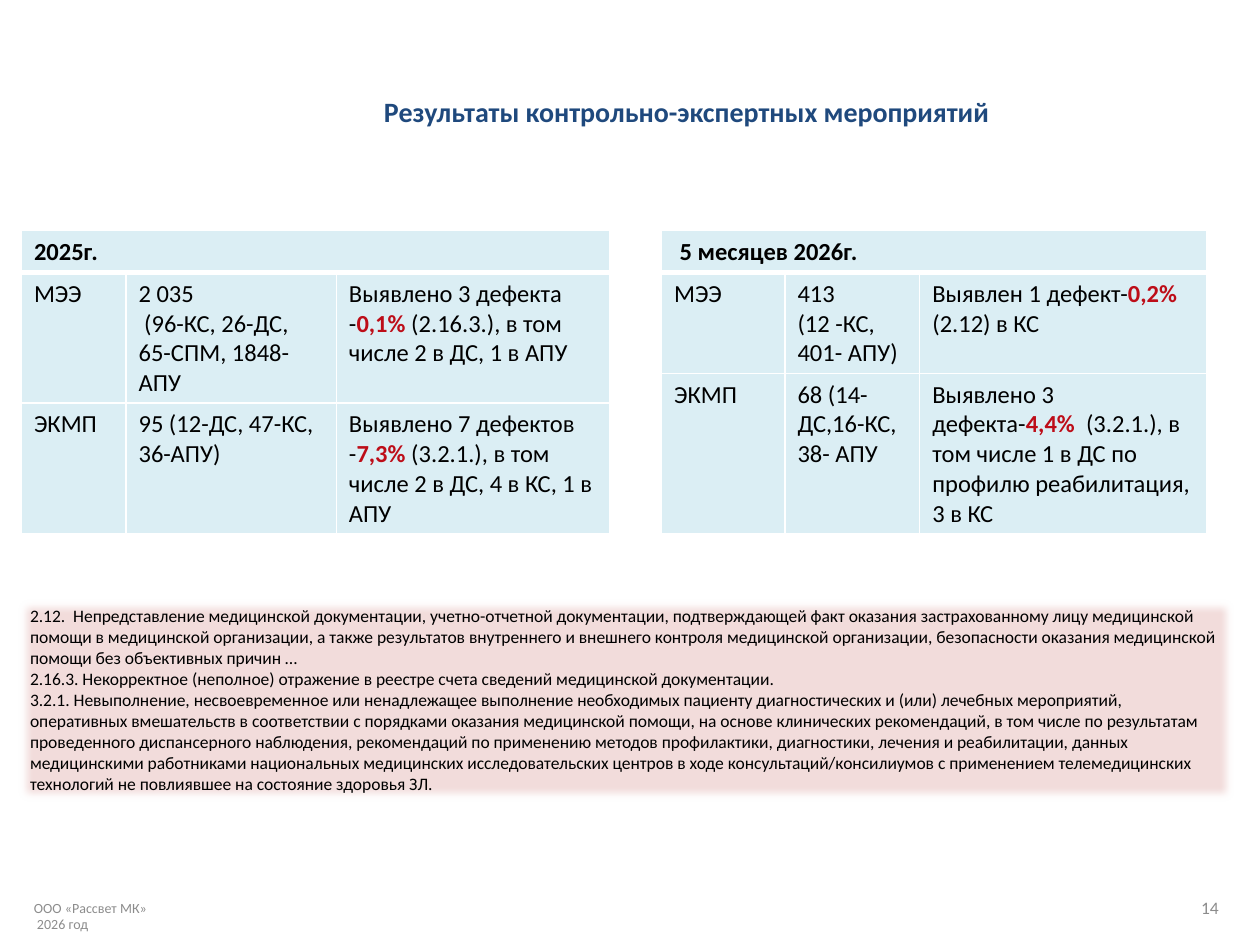
import pptx
import pptx.dml.color
import pptx.enum.shapes
import pptx.enum.text
import pptx.oxml
import pptx.oxml.ns
import pptx.util
from pptx.util import Inches

COLORS = {"title": "1F497D", "text": "000000", "muted": "8C8C8C", "accent": "BD0D18",
          "cell": "DBEEF4", "border": "FFFFFF", "note": "F2DCDB"}
ALIGN = pptx.enum.text.PP_ALIGN
ANCHOR = pptx.enum.text.MSO_ANCHOR


def rgb(name):
    return pptx.dml.color.RGBColor.from_string(COLORS[name])


def write_text(frame, text, size=14, color="text", bold=False, align=ALIGN.LEFT,
               anchor=ANCHOR.TOP, font="Calibri"):
    """Newlines split paragraphs; text between asterisks is bold in the accent colour."""
    frame.word_wrap = True
    frame.vertical_anchor = anchor
    for number, line in enumerate(text.split("\n")):
        para = frame.paragraphs[0] if number == 0 else frame.add_paragraph()
        para.alignment = align
        for index, part in enumerate(line.split("*")):
            if not part:
                continue
            marked = index % 2 == 1
            span = para.add_run()
            span.text = part
            span.font.name = font
            span.font.size = pptx.util.Pt(size)
            span.font.bold = bold or marked
            span.font.color.rgb = rgb("accent" if marked else color)


def add_border(cell, side, width):
    namespace = pptx.oxml.ns.nsdecls("a")
    cell._tc.get_or_add_tcPr().append(pptx.oxml.parse_xml(
        f'<a:ln{side} {namespace} w="{pptx.util.Pt(width)}"><a:solidFill>'
        f'<a:srgbClr val="{COLORS["border"]}"/></a:solidFill></a:ln{side}>'))


class SlideBuilder:
    def __init__(self, deck):
        self.page = deck.slides.add_slide(deck.slide_layouts[5])

    def title(self, text, left, top, width, height):
        box = self.page.shapes.title
        box.left, box.top, box.width, box.height = map(Inches, (left, top, width, height))
        write_text(box.text_frame, text, size=16, color="title", bold=True,
                   align=ALIGN.CENTER)

    def text(self, text, left, top, width, height, **style):
        box = self.page.shapes.add_textbox(*map(Inches, (left, top, width, height)))
        write_text(box.text_frame, text, **style)

    def note(self, lines, left, top, width, height):
        box = self.page.shapes.add_shape(pptx.enum.shapes.MSO_SHAPE.RECTANGLE,
                                         *map(Inches, (left, top, width, height)))
        box.fill.solid()
        box.fill.fore_color.rgb = rgb("note")
        box.line.fill.background()
        box.shadow.inherit = False
        effects = box._element.spPr.find(pptx.oxml.ns.qn("a:effectLst"))
        effects.append(pptx.oxml.parse_xml(
            f'<a:softEdge {pptx.oxml.ns.nsdecls("a")} rad="{pptx.util.Pt(5)}"/>'))
        write_text(box.text_frame, "\n".join(lines), size=10)

    def table(self, heading, rows, left, top, widths, heights):
        table = self.page.shapes.add_table(
            len(heights), len(widths), Inches(left), Inches(top),
            Inches(sum(widths)), Inches(sum(heights))).table
        for column, width in zip(table.columns, widths):
            column.width = Inches(width)
        for row, height in zip(table.rows, heights):
            row.height = Inches(height)
        table.cell(0, 0).merge(table.cell(0, len(widths) - 1))
        for row_index, texts in enumerate([[heading, "", ""], *rows]):
            for column_index, text in enumerate(texts):
                cell = table.cell(row_index, column_index)
                # The line under the heading is thicker
                for side in "LRTB":
                    thick = (row_index, side) in ((0, "B"), (1, "T"))
                    add_border(cell, side, 3 if thick else 1)
                cell.fill.solid()
                cell.fill.fore_color.rgb = rgb("cell")
                if text:
                    write_text(cell.text_frame, text, bold=row_index == 0)


def main():
    deck = pptx.Presentation()
    deck.slide_width, deck.slide_height = Inches(10), Inches(7.5)
    slide = SlideBuilder(deck)

    # Title
    slide.title("Результаты контрольно-экспертных мероприятий", 1.25, 0.7, 8.4, 0.37)

    # Footer
    slide.text("ООО «Рассвет МК»\n 2026 год", 0.17, 7.12, 2.08, 0.3,
               size=8, color="muted", anchor=ANCHOR.MIDDLE)

    # Defect codes
    slide.note([
        "2.12.  Непредставление медицинской документации, учетно-отчетной документации, "
        "подтверждающей факт оказания застрахованному лицу медицинской помощи в медицинской "
        "организации, а также результатов внутреннего и внешнего контроля медицинской "
        "организации, безопасности оказания медицинской помощи без объективных причин …",
        "2.16.3. Некорректное (неполное) отражение в реестре счета сведений медицинской "
        "документации.",
        "3.2.1. Невыполнение, несвоевременное или ненадлежащее выполнение необходимых "
        "пациенту диагностических и (или) лечебных мероприятий, оперативных вмешательств в "
        "соответствии с порядками оказания медицинской помощи, на основе клинических "
        "рекомендаций, в том числе по результатам проведенного диспансерного наблюдения, "
        "рекомендаций по применению методов профилактики, диагностики, лечения и "
        "реабилитации, данных медицинскими работниками национальных медицинских "
        "исследовательских центров в ходе консультаций/консилиумов с применением "
        "телемедицинских технологий не повлиявшее на состояние здоровья ЗЛ.",
    ], 0.14, 4.75, 9.66, 1.62)

    # Results by period
    slide.table(
        "2025г.",
        [["МЭЭ", "2 035\n (96-КС, 26-ДС, 65-СПМ, 1848-АПУ",
          "Выявлено 3 дефекта -*0,1% *(2.16.3.), в том числе 2 в ДС, 1 в АПУ"],
         ["ЭКМП", "95 (12-ДС, 47-КС, 36-АПУ)",
          "Выявлено 7 дефектов -*7,3% *(3.2.1.), в том числе 2 в ДС, 4 в КС, 1 в АПУ"]],
        0.17, 1.83, [0.83, 1.67, 2.17], [0.33, 1.03, 1.03])
    slide.table(
        " 5 месяцев 2026г.",
        [["МЭЭ", "413\n(12 -КС, 401- АПУ)", "Выявлен 1 дефект-*0,2% *(2.12) в КС"],
         ["ЭКМП", "68 (14- ДС,16-КС, 38- АПУ",
          "Выявлено 3 дефекта-*4,4%*  (3.2.1.), в том числе 1 в ДС по профилю "
          "реабилитация, 3 в КС"]],
        5.25, 1.83, [0.98, 1.07, 2.28], [0.33, 0.8, 1.26])

    # Page number
    slide.text("14", 7.48, 6.99, 2.29, 0.42, size=10, color="muted",
               align=ALIGN.RIGHT, anchor=ANCHOR.MIDDLE)

    deck.save("out.pptx")


if __name__ == "__main__":
    main()
